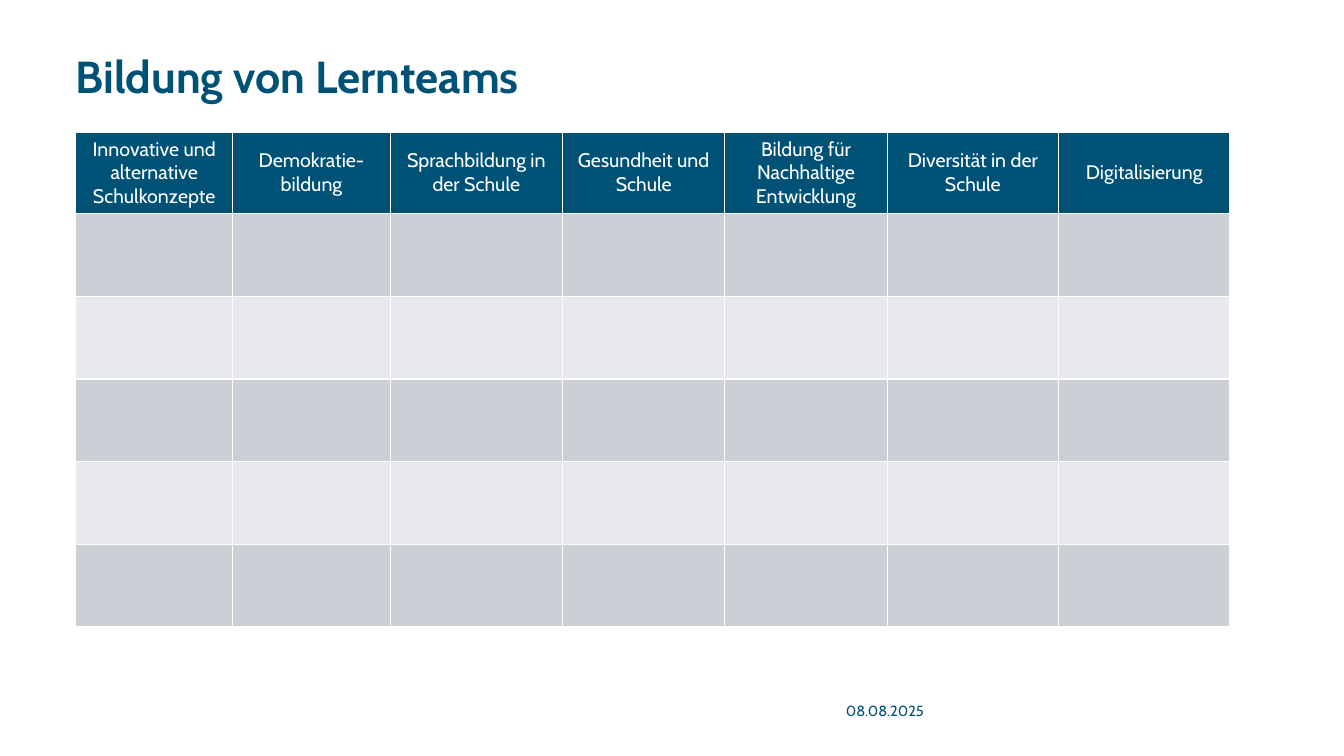
from dataclasses import dataclass

from pptx import Presentation
from pptx.dml.color import RGBColor
from pptx.enum.text import MSO_ANCHOR, MSO_AUTO_SIZE, PP_ALIGN
from pptx.util import Inches, Pt

TOP, MIDDLE = MSO_ANCHOR.TOP, MSO_ANCHOR.MIDDLE
LEFT, CENTER = PP_ALIGN.LEFT, PP_ALIGN.CENTER
NO_FIT = MSO_AUTO_SIZE.NONE

TOPICS = [
    "Innovative und alternative Schulkonzepte",
    "Demokratie-bildung",
    "Sprachbildung in der Schule",
    "Gesundheit und Schule",
    "Bildung für Nachhaltige Entwicklung",
    "Diversität in der Schule",
    "Digitalisierung",
]
WIDTHS = [1.56, 1.56, 1.71, 1.61, 1.61, 1.7, 1.7]
HEIGHTS = [0.79] + [0.82] * 5


@dataclass(frozen=True)
class Theme:
    font: str = "Cabin"
    blue: str = "005176"
    white: str = "FFFFFF"
    bands: tuple = ("CCD0D6", "E7E9EC")
    title: float = 32
    head: float = 14
    date: float = 10.5


class Deck:
    """Builds slide elements in one shared style."""

    def __init__(self, theme):
        self.theme = theme
        self.file = Presentation()
        self.file.slide_width = Inches(13.33)
        self.file.slide_height = Inches(7.5)
        self.slide = self.file.slides.add_slide(self.file.slide_layouts[5])

    def apply(self, item, values):
        for name, value in values.items():
            setattr(item, name, value)

    def fill_text(self, frame, text, size, color, bold=False, align=LEFT):
        frame.text = text
        line = frame.paragraphs[0]
        line.alignment = align
        self.apply(line.runs[0].font, {
            "name": self.theme.font, "size": Pt(size), "bold": bold,
        })
        line.runs[0].font.color.rgb = RGBColor.from_string(color)
        return line

    def place(self, shape, box, anchor):
        names = ("left", "top", "width", "height")
        self.apply(shape, dict(zip(names, map(Inches, box))))
        self.apply(shape.text_frame, {
            "margin_left": 0, "margin_top": 0,
            "margin_right": 0, "margin_bottom": 0,
            "word_wrap": True, "auto_size": NO_FIT,
            "vertical_anchor": anchor,
        })

    def title(self, text, box):
        shape = self.slide.shapes.title
        self.place(shape, box, TOP)
        line = self.fill_text(shape.text_frame, text, self.theme.title,
                              self.theme.blue, bold=True)
        line.line_spacing = 0.9

    def label(self, text, box):
        shape = self.slide.shapes.add_textbox(*map(Inches, box))
        self.place(shape, box, MIDDLE)
        self.fill_text(shape.text_frame, text, self.theme.date, self.theme.blue)

    def table(self, heads, widths, heights, left, top):
        grid = self.slide.shapes.add_table(
            len(heights), len(widths), Inches(left), Inches(top),
            Inches(sum(widths)), Inches(sum(heights))).table
        for col, width in zip(grid.columns, widths):
            col.width = Inches(width)
        for index, height in enumerate(heights):
            row = grid.rows[index]
            row.height = Inches(height)
            color = self.theme.bands[(index - 1) % 2] if index else self.theme.blue
            for cell in row.cells:
                cell.fill.solid()
                cell.fill.fore_color.rgb = RGBColor.from_string(color)
        for cell, text in zip(grid.rows[0].cells, heads):
            cell.vertical_anchor = MIDDLE
            self.fill_text(cell.text_frame, text, self.theme.head,
                           self.theme.white, align=CENTER)


def main():
    deck = Deck(Theme())
    deck.title("Bildung von Lernteams", (0.75, 0.54, 11.98, 0.5))
    deck.table(TOPICS, WIDTHS, HEIGHTS, 0.75, 1.31)
    deck.label("08.08.2025", (8.39, 6.92, 1.34, 0.27))
    deck.file.save("out.pptx")


if __name__ == "__main__":
    main()
